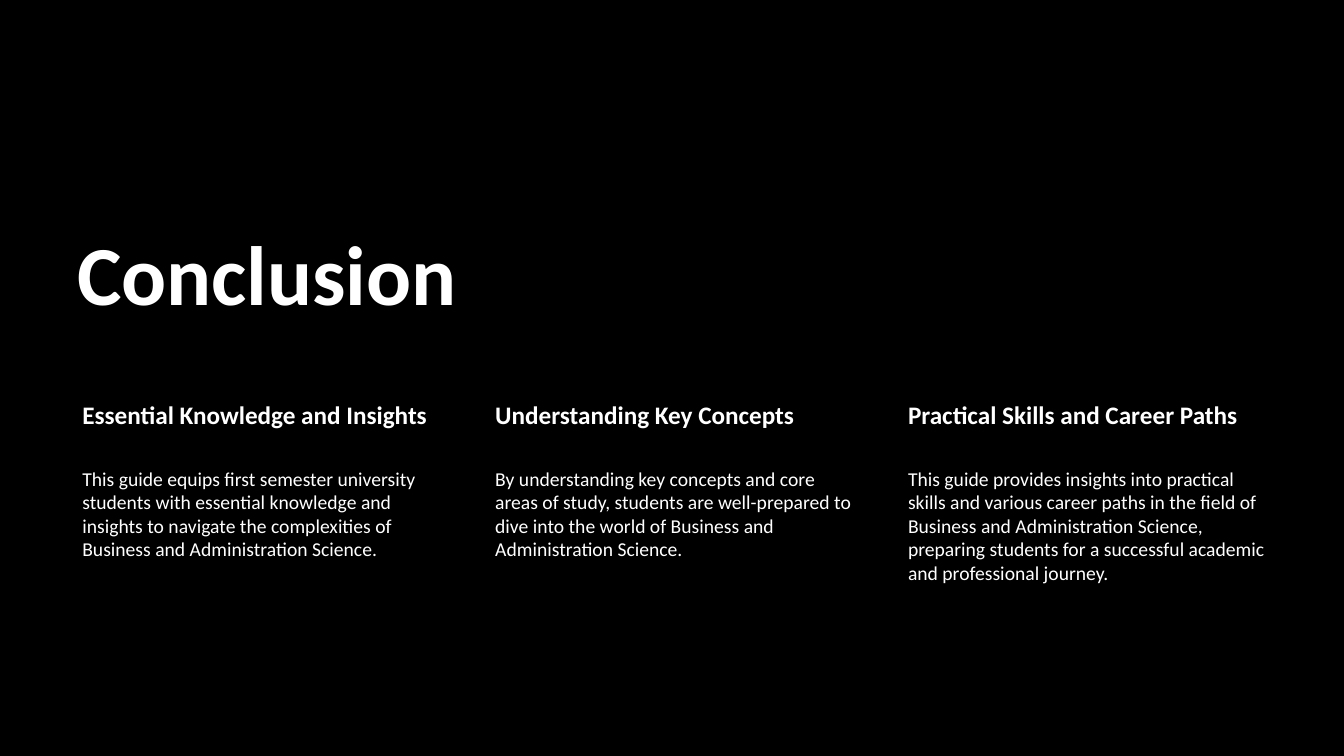
from pptx import Presentation
from pptx.dml.color import RGBColor
from pptx.enum.text import MSO_ANCHOR
from pptx.util import Pt

COLORS = {"background": "000000", "text": "FFFFFF"}
FONT = "Calibri"

LEFT, COLUMN_PITCH, COLUMN_WIDTH = 48, 294.9, 267.8
HEADING_TOP, HEADING_HEIGHT, BODY_HEIGHT = 283, 49, 148

TAKEAWAYS = [
    ("Essential Knowledge and Insights",
     "This guide equips first semester university students with essential knowledge "
     "and insights to navigate the complexities of Business and Administration Science."),
    ("Understanding Key Concepts",
     "By understanding key concepts and core areas of study, students are well-prepared "
     "to dive into the world of Business and Administration Science."),
    ("Practical Skills and Career Paths",
     "This guide provides insights into practical skills and various career paths in the "
     "field of Business and Administration Science, preparing students for a successful "
     "academic and professional journey."),
]


def add_text(s, text, left, top, width, height, *, size, bold=False,
             insets=(7.2, 3.6, 7.2, 3.6), anchor=MSO_ANCHOR.TOP, line_spacing=1.0):
    """Add a wrapped text box; insets are left, top, right, bottom in points."""
    tf = s.shapes.add_textbox(Pt(left), Pt(top), Pt(width), Pt(height)).text_frame
    tf.word_wrap = True
    tf.vertical_anchor = anchor
    tf.margin_left, tf.margin_top, tf.margin_right, tf.margin_bottom = map(Pt, insets)
    p = tf.paragraphs[0]
    p.line_spacing = line_spacing
    r = p.add_run()
    r.text = text
    r.font.name = FONT
    r.font.size = Pt(size)
    r.font.bold = bold
    r.font.color.rgb = RGBColor.from_string(COLORS["text"])


def add_takeaway(s, left, heading, body):
    add_text(s, heading, left, HEADING_TOP, COLUMN_WIDTH, HEADING_HEIGHT,
             size=18, bold=True, insets=(10.8, 2, 2, 2))
    add_text(s, body, left, HEADING_TOP + HEADING_HEIGHT, COLUMN_WIDTH, BODY_HEIGHT,
             size=14, insets=(10.8, 1.4, 1.4, 1.4))


def main():
    prs = Presentation()
    prs.slide_width, prs.slide_height = Pt(960), Pt(540)
    s = prs.slides.add_slide(prs.slide_layouts[6])
    fill = s.background.fill
    fill.solid()
    fill.fore_color.rgb = RGBColor.from_string(COLORS["background"])

    add_text(s, "Conclusion", LEFT, 145.5, 578, 89.3, size=60, bold=True,
             anchor=MSO_ANCHOR.BOTTOM, line_spacing=0.9)
    for i, (heading, body) in enumerate(TAKEAWAYS):
        add_takeaway(s, LEFT + i * COLUMN_PITCH, heading, body)
    prs.save("out.pptx")


if __name__ == "__main__":
    main()
